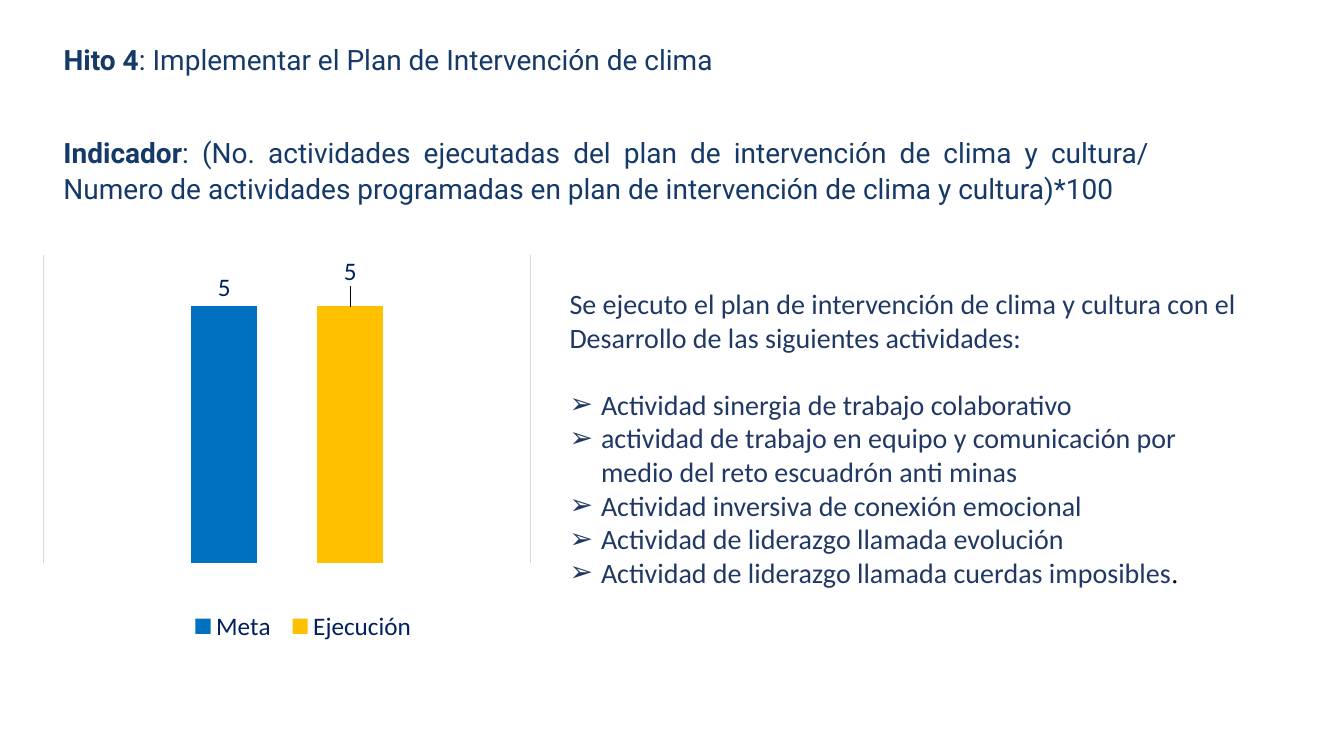
from lxml.etree import SubElement
from pptx import Presentation
from pptx.chart.data import CategoryChartData
from pptx.dml.color import RGBColor
from pptx.enum.chart import XL_CHART_TYPE as ChartType
from pptx.enum.chart import XL_LABEL_POSITION as LabelPos
from pptx.enum.chart import XL_LEGEND_POSITION as LegendPos
from pptx.enum.text import MSO_ANCHOR as Anchor
from pptx.enum.text import MSO_AUTO_SIZE as AutoSize
from pptx.enum.text import PP_ALIGN as Align
from pptx.oxml import parse_xml
from pptx.oxml.ns import nsdecls, qn
from pptx.util import Pt


def rgb(code):
    return RGBColor.from_string(code)


class SlideBuilder:
    """Adds styled elements to one slide."""

    heading_font, heading_color = "Roboto", "163A68"
    body_font, body_color = "Calibri", "203864"
    label_color, grid_color = "002060", "D9D9D9"
    text_size, label_size = 20, 18

    def __init__(self, prs):
        self.slide = prs.slides.add_slide(prs.slide_layouts[1])

    def place(self, sp, left, top, width, height):
        sp.left, sp.top, sp.width, sp.height = map(Pt, (left, top, width, height))
        tf = sp.text_frame
        tf.word_wrap = True
        tf.auto_size = AutoSize.NONE
        tf.vertical_anchor = Anchor.TOP
        return tf

    def style(self, font, name, color, size, bold=False):
        font.name, font.size, font.bold = name, Pt(size), bold
        font.color.rgb = rgb(color)

    def labelled_line(self, sp, box, label, text):
        p = self.place(sp, *box).paragraphs[0]
        p.text = label
        p.add_run().text = text
        p.alignment = Align.JUSTIFY
        p.line_spacing = 1.07
        for r in p.runs:
            self.style(r.font, self.heading_font, self.heading_color, self.text_size, r.text == label)

    def title(self, box, label, text):
        self.labelled_line(self.slide.shapes.title, box, label, text)

    def text_box(self, box, label, text):
        sp = self.slide.shapes.add_textbox(*map(Pt, box))
        self.labelled_line(sp, box, label, text)

    def bullet_list(self, box, intro, items, ending):
        tf = self.place(self.slide.placeholders[1], *box)
        tf.text = "\n".join([intro, *items])
        for i, p in enumerate(tf.paragraphs):
            indent = Pt(22.5) if i else 0
            pPr = p._p.get_or_add_pPr()
            pPr.set("marL", str(indent))
            pPr.set("indent", str(-indent))
            if i:
                SubElement(pPr, qn("a:buChar"), char="➢")
            else:
                SubElement(pPr, qn("a:buNone"))
            p.space_before = Pt(24 if i == 1 else 0)
            p.alignment = Align.LEFT
            for r in p.runs:
                self.style(r.font, self.body_font, self.body_color, self.text_size)
        r = tf.paragraphs[-1].add_run()
        r.text = ending
        self.style(r.font, "Times New Roman", "000000", self.text_size)

    def layout(self, parent, index, **values):
        for old in parent.findall(qn("c:layout")):
            parent.remove(old)
        parts = "".join(f'<c:{tag} val="{val}"/>' for tag, val in values.items())
        parent.insert(index, parse_xml(
            f'<c:layout {nsdecls("c")}><c:manualLayout>{parts}</c:manualLayout></c:layout>'))

    def column_chart(self, box, category, series, top_value):
        data = CategoryChartData(number_format="0")
        data.categories = [category]
        for name, value, _, _ in series:
            data.add_series(name, [value])
        chart = self.slide.shapes.add_chart(ChartType.COLUMN_CLUSTERED, *map(Pt, box), data).chart
        self.style(chart.font, self.body_font, self.label_color, self.label_size)
        chart.has_title = False
        plot = chart.plots[0]
        plot.gap_width, plot.overlap, plot.vary_by_categories = 444, -90, False

        across, up = chart.category_axis, chart.value_axis
        across.has_major_gridlines, up.has_major_gridlines = True, False
        line = across.major_gridlines.format.line
        line.width, line.color.rgb = Pt(0.75), rgb(self.grid_color)
        up.minimum_scale, up.maximum_scale = 0, top_value
        across.visible = up.visible = False

        for ser, (_, _, color, label_shift) in zip(plot.series, series):
            ser.format.fill.solid()
            ser.format.fill.fore_color.rgb = rgb(color)
            label = ser.points[0].data_label
            self.style(label.font, self.body_font, self.label_color, self.label_size)
            label.position = LabelPos.OUTSIDE_END
            if label_shift:
                self.layout(ser.data_labels._element.find(qn("c:dLbl")), 1, x=0, y=label_shift)

        chart.has_legend = True
        legend = chart.legend
        legend.position, legend.include_in_layout = LegendPos.TOP, False
        self.style(legend.font, self.body_font, self.label_color, self.label_size)
        self.layout(legend._element, 1, xMode="edge", yMode="edge", x=0.3, y=0.79, w=0.45, h=0.09)
        self.layout(chart._chartSpace.chart.plotArea, 0, layoutTarget="inner", xMode="edge",
                    yMode="edge", x=0.044, y=0.022, w=0.903, h=0.674)


def main():
    prs = Presentation()
    prs.slide_width, prs.slide_height = Pt(960), Pt(540)
    s = SlideBuilder(prs)
    s.title((38.2, 25.2, 790, 36), "Hito 4", ": Implementar el Plan de Intervención de clima")
    s.text_box(
        (38.2, 91.5, 790, 60), "Indicador",
        ": (No. actividades ejecutadas del plan de intervención de clima y cultura/ "
        "Numero de actividades programadas en plan de intervención de clima y cultura)*100")
    s.bullet_list(
        (399.6, 201, 501, 271.4),
        "Se ejecuto el plan de intervención de clima y cultura con el "
        "Desarrollo de las siguientes actividades:",
        ["Actividad sinergia de trabajo colaborativo",
         "actividad de trabajo en equipo y comunicación por medio del reto escuadrón anti minas",
         "Actividad inversiva de conexión emocional",
         "Actividad de liderazgo llamada evolución",
         "Actividad de liderazgo llamada cuerdas imposibles"], ".")
    s.column_chart(
        (14.4, 175, 385.2, 326.2), "1",
        [("Meta", 5, "0070C0", 0), ("Ejecución", 5, "FFC000", -0.035)], 6)
    prs.save("out.pptx")


if __name__ == "__main__":
    main()
